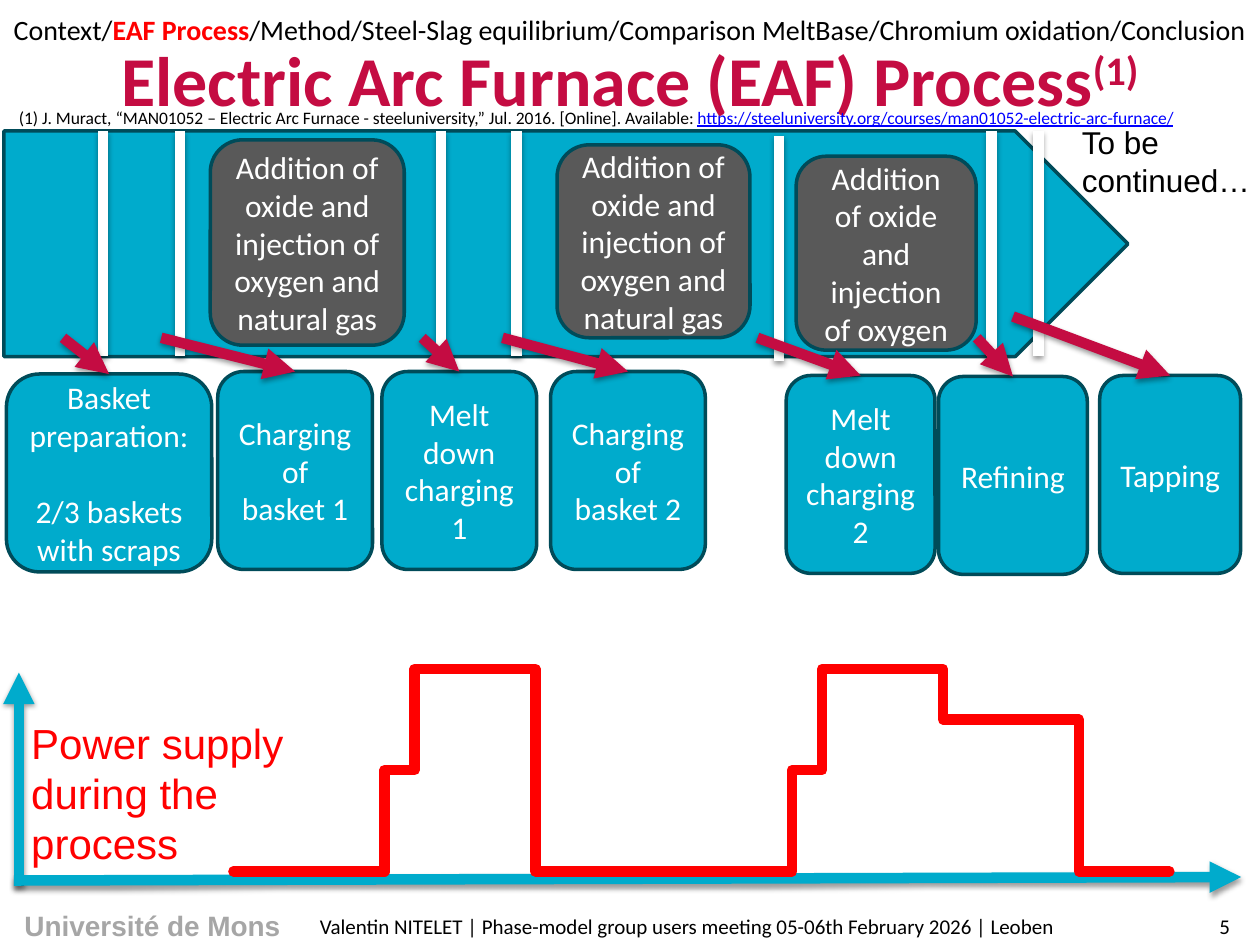
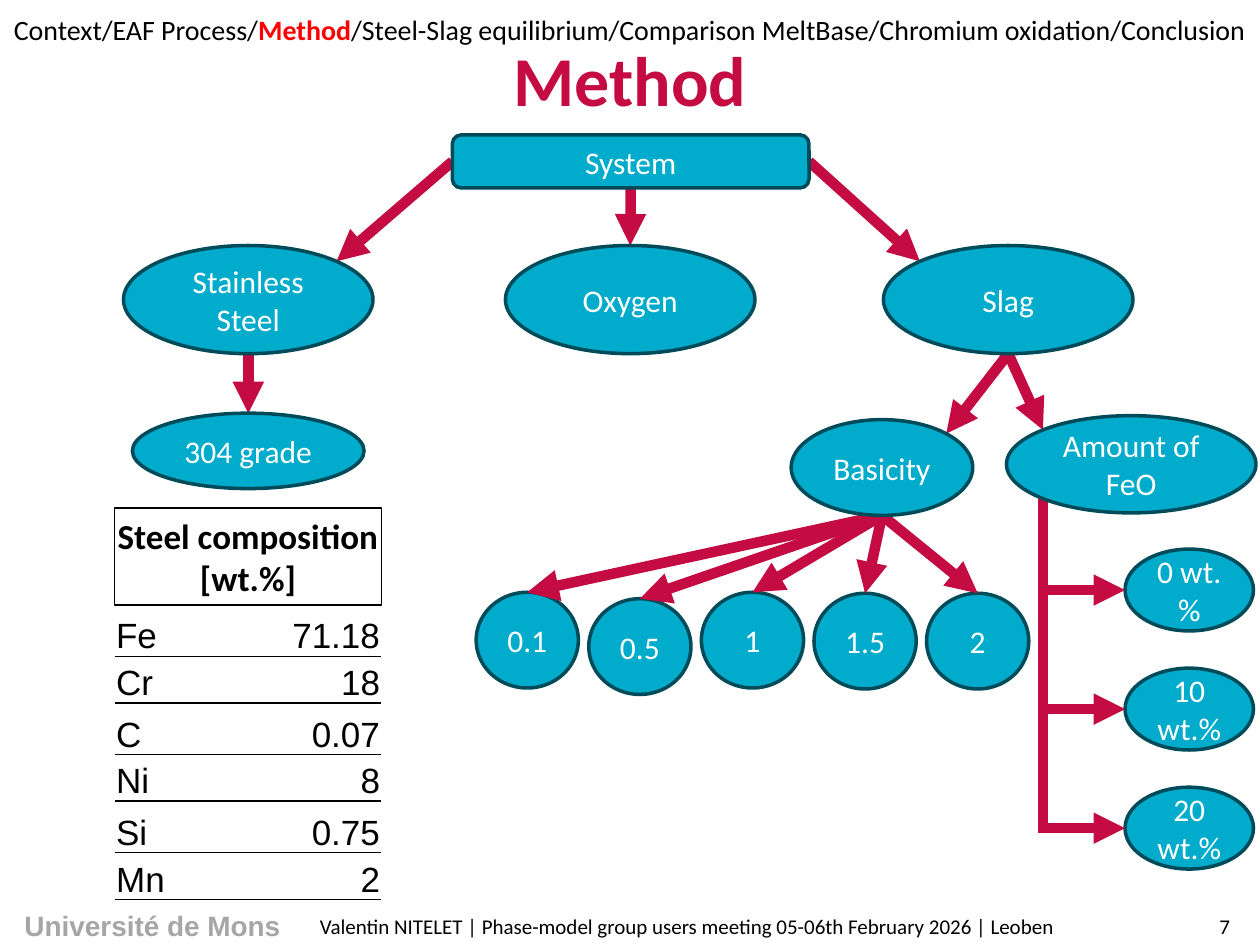
from dataclasses import dataclass, replace
from typing import NamedTuple

from lxml import etree
from pptx import Presentation
from pptx.chart.data import XyChartData
from pptx.dml.color import RGBColor
from pptx.enum.chart import XL_CHART_TYPE
from pptx.enum.shapes import MSO_CONNECTOR, MSO_SHAPE
from pptx.enum.text import MSO_ANCHOR, PP_ALIGN
from pptx.oxml.ns import qn
from pptx.slide import Slide
from pptx.text.text import TextFrame
from pptx.util import Cm, Pt

ROUND = MSO_SHAPE.ROUNDED_RECTANGLE
OVAL = MSO_SHAPE.OVAL
ARROW = MSO_SHAPE.RIGHT_ARROW
STRAIGHT = MSO_CONNECTOR.STRAIGHT
SCATTER = XL_CHART_TYPE.XY_SCATTER_LINES_NO_MARKERS
LEFT, CENTER, RIGHT = PP_ALIGN.LEFT, PP_ALIGN.CENTER, PP_ALIGN.RIGHT
TOP, MIDDLE, BOTTOM = MSO_ANCHOR.TOP, MSO_ANCHOR.MIDDLE, MSO_ANCHOR.BOTTOM

CYAN = RGBColor(0x00, 0xAB, 0xCC)
TEAL = RGBColor(0x00, 0x4B, 0x59)
CRIMSON = RGBColor(0xC4, 0x0C, 0x42)
RED = RGBColor(0xFF, 0x00, 0x00)
BLUE = RGBColor(0x00, 0x00, 0xFF)
DARK = RGBColor(0x59, 0x59, 0x59)
GREY = RGBColor(0xA6, 0xA6, 0xA6)
BLACK = RGBColor(0x00, 0x00, 0x00)
WHITE = RGBColor(0xFF, 0xFF, 0xFF)

WIDTH, HEIGHT = 25.4, 19.05
EDGE = 0.146
TOPICS = ["Context", "EAF Process", "Method", "Steel-Slag equilibrium",
          "Comparison MeltBase", "Chromium oxidation", "Conclusion"]
FOOTER = "Valentin NITELET | Phase-model group users meeting 05-06th February 2026 | Leoben"


class Point(NamedTuple):
    x: float
    y: float


class Box(NamedTuple):
    x: float
    y: float
    w: float
    h: float

    def spot(self, across: float, down: float) -> Point:
        return Point(self.x + self.w * across, self.y + self.h * down)


class Run(NamedTuple):
    text: str
    color: RGBColor | None = None
    bold: bool | None = None
    under: bool | None = None
    base: int = 0


@dataclass(frozen=True)
class Style:
    size: float
    color: RGBColor = BLACK
    font: str = "Calibri"
    bold: bool = False
    align: PP_ALIGN = LEFT
    anchor: MSO_ANCHOR = TOP
    wrap: bool = True
    gap: float = 0


class Node(NamedTuple):
    text: str
    box: Box
    form: MSO_SHAPE = OVAL
    fill: RGBColor = CYAN


class Step(NamedTuple):
    node: Node
    start: Point


LABEL = Style(18, WHITE, align=CENTER, anchor=MIDDLE)
TITLE = Style(40, CRIMSON, bold=True, align=CENTER, anchor=MIDDLE)
NAV = Style(16, align=CENTER, wrap=False)
SMALL = Style(12, anchor=MIDDLE)
SCHOOL = Style(16, GREY, "Arial", True, CENTER)
CITE = Style(10, anchor=MIDDLE)
CELL = Style(20, font="Arial", anchor=BOTTOM)
HEAD = Style(20, bold=True, align=CENTER, wrap=False)


def place(box: Box) -> list[Cm]:
    return [Cm(side) for side in box]


def write(frame: TextFrame, lines: list[list[Run]], style: Style) -> None:
    frame.word_wrap = style.wrap
    frame.vertical_anchor = style.anchor
    for i, runs in enumerate(lines):
        para = frame.add_paragraph() if i else frame.paragraphs[0]
        para.alignment = style.align
        if i:
            para.space_before = Pt(style.gap)
        font = para.font
        font.size, font.name, font.bold = Pt(style.size), style.font, style.bold
        font.color.rgb = style.color
        for part in runs:
            run = para.add_run()
            run.text = part.text
            if part.color is not None:
                run.font.color.rgb = part.color
            if part.bold is not None:
                run.font.bold = part.bold
            if part.under is not None:
                run.font.underline = part.under
            if part.base:
                run.font._element.set("baseline", str(part.base))


def add_text(slide: Slide, box: Box, runs: list[Run], style: Style) -> None:
    write(slide.shapes.add_textbox(*place(box)).text_frame, [runs], style)


def add_node(slide: Slide, node: Node) -> None:
    shape = slide.shapes.add_shape(node.form, *place(node.box))
    shape.shadow.inherit = False
    shape.fill.solid()
    shape.fill.fore_color.rgb = node.fill
    shape.line.color.rgb = TEAL
    shape.line.width = Pt(2)
    if node.form == ARROW:
        shape.adjustments[0] = 1
    if node.text:
        lines = [[Run(line)] for line in node.text.split("\n")]
        write(shape.text_frame, lines, replace(LABEL, gap=22))


def add_line(slide: Slide, start: Point, end: Point, color: RGBColor = CRIMSON,
             head: bool = True, shade: bool = False) -> None:
    line = slide.shapes.add_connector(STRAIGHT, *[Cm(n) for n in (*start, *end)])
    line.line.color.rgb = color
    line.line.width = Pt(6)
    props = line.element.find(qn("p:spPr"))
    if head:
        etree.SubElement(props.find(qn("a:ln")), qn("a:tailEnd"), type="triangle")
    effects = etree.SubElement(props, qn("a:effectLst"))
    if shade:
        shadow = etree.SubElement(effects, qn("a:outerShdw"), blurRad=str(Pt(3.1)),
                                  dist=str(Pt(1.6)), dir="5400000", rotWithShape="0")
        tint = etree.SubElement(shadow, qn("a:srgbClr"), val=str(BLACK))
        etree.SubElement(tint, qn("a:alpha"), val="38000")


def start_slide(deck: Presentation, topic: str, title: list[Run], page: int) -> Slide:
    slide = deck.slides.add_slide(deck.slide_layouts[6])
    add_text(slide, Box(0, 18.19, 6.15, 0.86), [Run("Université de Mons")], SCHOOL)
    add_text(slide, Box(0, 0, WIDTH, 3.18), title, TITLE)
    add_text(slide, Box(6.2, 18.29, 17.78, 0.76), [Run(FOOTER)], SMALL)
    add_text(slide, Box(23.98, 18.29, 1.42, 0.76), [Run(str(page))],
             replace(SMALL, align=CENTER))
    before, after = "/".join(TOPICS).split(topic)
    add_text(slide, Box(0, 0.13, WIDTH, 1.02),
             [Run(before), Run(topic, RED, True), Run(after)], NAV)
    return slide


def add_power(slide: Slide) -> None:
    times = [0, 1, 2, 3, 4, 5, 5, 6, 6, 10, 10, 15, 18.5, 18.5, 19.5, 19.5,
             23.5, 23.5, 28, 28, 31]
    loads = [0, 0, 0, 0, 0, 0, 50, 50, 100, 100, 0, 0, 0, 50, 50, 100, 100, 75, 75, 0, 0]
    data = XyChartData()
    series = data.add_series("Series 1")
    for time, load in zip(times, loads):
        series.add_data_point(time, load)
    frame = slide.shapes.add_chart(SCATTER, *place(Box(4.6, 12.67, 21.41, 5)), data)
    chart = frame.chart
    chart.has_title = chart.has_legend = False
    chart.font.size, chart.font.name = Pt(10), "Calibri"
    chart.font.color.rgb = BLACK
    for axis, top in ((chart.category_axis, 35), (chart.value_axis, 120)):
        axis.minimum_scale, axis.maximum_scale = 0, top
        axis.has_major_gridlines = False
        axis.visible = False
    plot = chart.plots[0]
    plot.vary_by_categories = False
    curve = plot.series[0]
    curve.smooth = False
    curve.format.line.color.rgb = RED
    curve.format.line.width = Pt(6)
    area = chart.element.find(".//" + qn("c:plotArea"))
    stroke = area.find(".//" + qn("c:ser")).find(".//" + qn("a:ln"))
    stroke.set("cap", "rnd")
    etree.SubElement(stroke, qn("a:round"))
    for old in area.findall(qn("c:layout")):
        area.remove(old)
    layout = etree.Element(qn("c:layout"))
    area.insert(0, layout)
    manual = etree.SubElement(layout, qn("c:manualLayout"))
    for key, val in (("layoutTarget", "inner"), ("xMode", "edge"), ("yMode", "edge"),
                     ("x", "0"), ("y", "0"), ("w", "1"), ("h", "1")):
        etree.SubElement(manual, qn("c:" + key), val=val)


def add_steel(slide: Slide) -> None:
    rows = [("Fe", "71.18"), ("Cr", "18"), ("C", "0.07"),
            ("Ni", "8"), ("Si", "0.75"), ("Mn", "2")]
    frame = slide.shapes.add_table(len(rows), 2, *place(Box(2.31, 12.19, 5.38, 5.94)))
    frame.element.find(".//" + qn("a:tableStyleId")).text = "{2D5ABB26-0587-4C30-8999-92F81FD0307C}"
    table = frame.table
    table.first_row = table.horz_banding = False
    for col, width in zip(table.columns, (2.59, 2.79)):
        col.width = Cm(width)
    for i, texts in enumerate(rows):
        table.rows[i].height = Cm(0.94 if i % 2 else 1.04)
        for j, text in enumerate(texts):
            cell = table.cell(i, j)
            cell.margin_left = cell.margin_right = cell.margin_top = Cm(0.03)
            cell.margin_bottom = 0
            cell.vertical_anchor = BOTTOM
            write(cell.text_frame, [[Run(text)]], replace(CELL, align=RIGHT if j else LEFT))
            cell.fill.background()
            props = cell._tc.get_or_add_tcPr()
            for k, side in enumerate(("a:lnT", "a:lnB")):
                rule = etree.Element(qn(side), w=str(Pt(1)))
                fill = etree.SubElement(rule, qn("a:solidFill"))
                etree.SubElement(fill, qn("a:srgbClr"), val=str(BLACK))
                props.insert(k, rule)
    head = slide.shapes.add_textbox(*place(Box(2.31, 10.24, 5.38, 1.96)))
    head.line.color.rgb = BLACK
    head.line.width = Pt(0.75)
    head.text_frame.margin_left = head.text_frame.margin_right = 0
    write(head.text_frame, [[Run("Steel composition")], [Run("[wt.%]")]], HEAD)


def draw_process(deck: Presentation) -> None:
    title = [Run("Electric Arc Furnace (EAF) Process"), Run("(1)", base=30000)]
    slide = start_slide(deck, "EAF Process", title, 5)
    add_text(slide, Box(21.56, 2.36, 4.11, 1.8), [Run("To be continued…")],
             Style(18, font="Arial"))
    steps = [
        Step(Node(text, Box(x, y, w, 3.99), ROUND), Point(*start))
        for text, x, y, w, start in (
            ("Basket preparation:\n2/3 baskets with scraps", 0.13, 7.54, 4.14, (1.27, 6.81)),
            ("Charging of basket 1", 4.39, 7.49, 3.12, (3.25, 6.81)),
            ("Melt down charging 1", 7.7, 7.49, 3.12, (8.51, 6.81)),
            ("Charging of basket 2", 11.1, 7.49, 3.12, (10.13, 6.81)),
            ("Melt down charging 2", 15.85, 7.57, 3, (15.27, 6.81)),
            ("Refining", 18.92, 7.59, 3, (19.69, 6.81)),
            ("Tapping", 22.17, 7.57, 2.84, (20.42, 6.38)))]
    for step in steps:
        add_node(slide, step.node)
    add_line(slide, Point(0.38, 17.86), Point(0.38, 13.56), CYAN, shade=True)
    add_line(slide, Point(0.28, 17.75), Point(25.02, 17.68), CYAN, shade=True)
    add_power(slide)
    add_text(slide, Box(0.38, 14.33, 7.32, 2.31),
             [Run("Power supply during the process")], Style(24, RED, "Arial"))
    add_node(slide, Node("", Box(0.08, 2.64, 22.66, 4.55), ARROW))
    for x in (2.08, 3.63, 8.89, 10.41, 15.7, 19.99, 20.93):
        y = 2.74 if x == 15.7 else 2.64
        add_line(slide, Point(x, y), Point(x, y + 4.53), WHITE, head=False, shade=True)
    short = "Addition of oxide and injection of oxygen"
    full = short + " and natural gas"
    for text, box in ((full, Box(4.24, 2.82, 3.91, 4.14)),
                      (full, Box(11.23, 2.92, 3.89, 3.89)),
                      (short, Box(16.05, 3.15, 3.63, 3.91))):
        add_node(slide, Node(text, box, ROUND, DARK))
    for step in steps:
        add_line(slide, step.start, step.node.box.spot(0.5, 0), shade=True)
    add_text(slide, Box(0.13, 2.08, 24.43, 0.56), [
        Run("(1) J. Muract, “MAN01052 – Electric Arc Furnace - steeluniversity,” "
            "Jul. 2016. [Online]. Available: "),
        Run("https://steeluniversity.org/courses/man01052-electric-arc-furnace/",
            BLUE, under=True)], CITE)


def draw_method(deck: Presentation) -> None:
    slide = start_slide(deck, "Method", [Run("Method")], 7)
    root = Node("System", Box(9.12, 2.72, 7.19, 1.07), ROUND)
    steel, gas, slag = [
        Node(text, Box(x, 4.95, 5.03, 2.18))
        for text, x in (("Stainless Steel", 2.49), ("Oxygen", 10.19), ("Slag", 17.81))]
    grade = Node("304 grade", Box(2.67, 8.33, 4.67, 1.52))
    basic = Node("Basicity", Box(15.95, 8.46, 3.66, 1.93))
    oxide = Node("Amount of FeO", Box(20.29, 8.38, 5.03, 1.96))
    ratios = [Node(text, Box(9.6 + 2.27 * i, y, 2.06, 1.93))
              for i, (text, y) in enumerate((("0.1", 11.94), ("0.5", 12.07), ("1", 11.94),
                                             ("1.5", 11.96), ("2", 11.96)))]
    shares = [Node(f"{10 * i} wt.%", Box(22.68, 11.07 + 2.4 * i, 2.59, 1.65))
              for i in range(3)]
    for node in ratios + shares:
        add_node(slide, node)

    stem = oxide.box.spot(EDGE, 1 - EDGE)
    ends = [node.box.spot(0, 0.5) for node in shares]
    add_line(slide, stem, Point(stem.x, ends[-1].y + 0.1), head=False)
    for end in ends:
        add_line(slide, Point(stem.x, end.y), end)
    for node in reversed(ratios):
        add_line(slide, basic.box.spot(0.5, 1), node.box.spot(0.5, 0))
    foot = slag.box.spot(0.5, 1)
    for start, end in ((foot, basic.box.spot(1 - EDGE, EDGE)),
                       (foot, oxide.box.spot(EDGE, EDGE)),
                       (root.box.spot(0.5, 1), gas.box.spot(0.5, 0)),
                       (root.box.spot(0, 0.5), steel.box.spot(1 - EDGE, EDGE)),
                       (root.box.spot(1, 0.5), slag.box.spot(EDGE, EDGE)),
                       (steel.box.spot(0.5, 1), grade.box.spot(0.5, 0))):
        add_line(slide, start, end)
    for node in (root, steel, gas, slag, grade, basic, oxide):
        add_node(slide, node)
    add_steel(slide)


def main() -> None:
    deck = Presentation()
    deck.slide_width, deck.slide_height = Cm(WIDTH), Cm(HEIGHT)
    draw_process(deck)
    draw_method(deck)
    deck.save("out.pptx")


if __name__ == "__main__":
    main()
